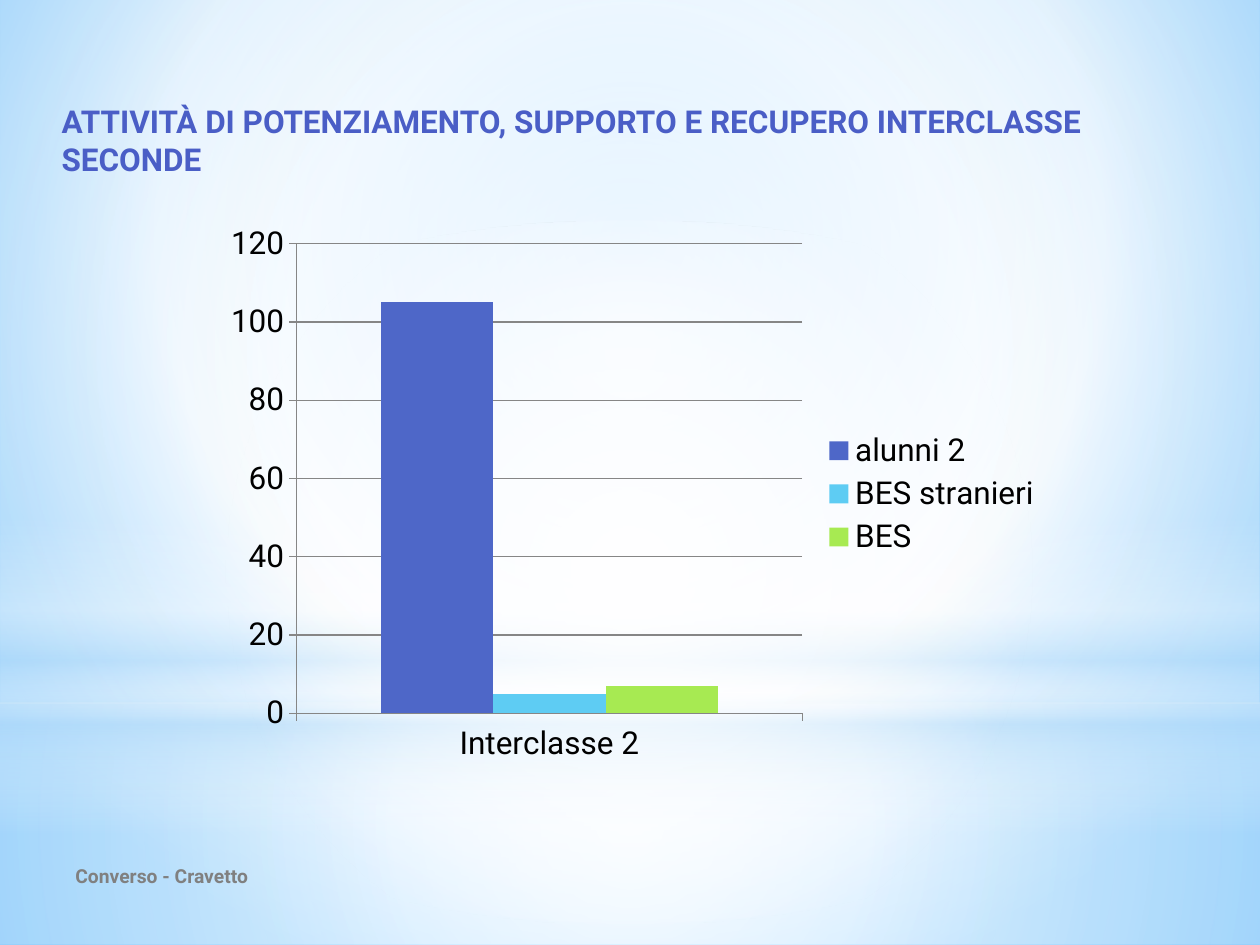
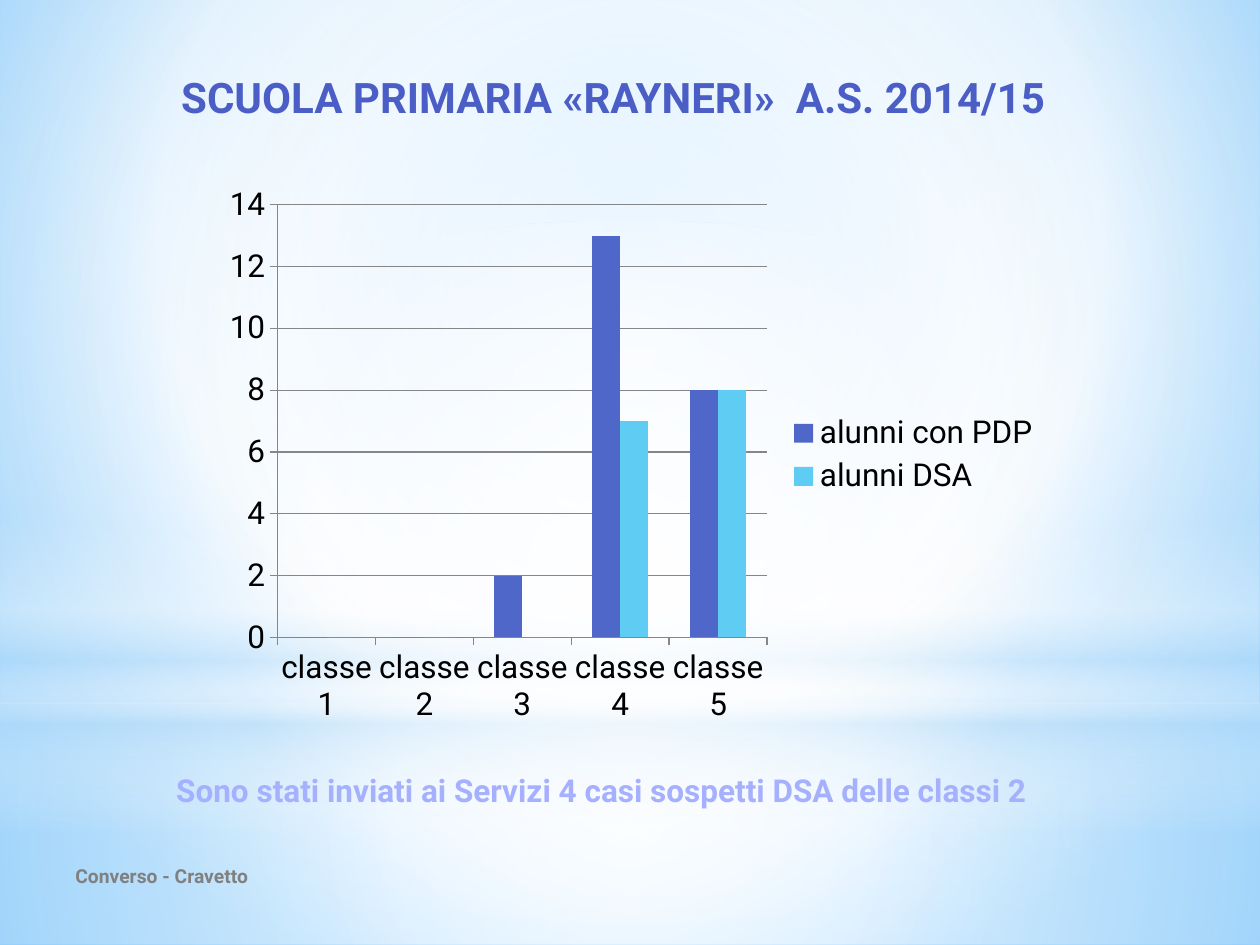
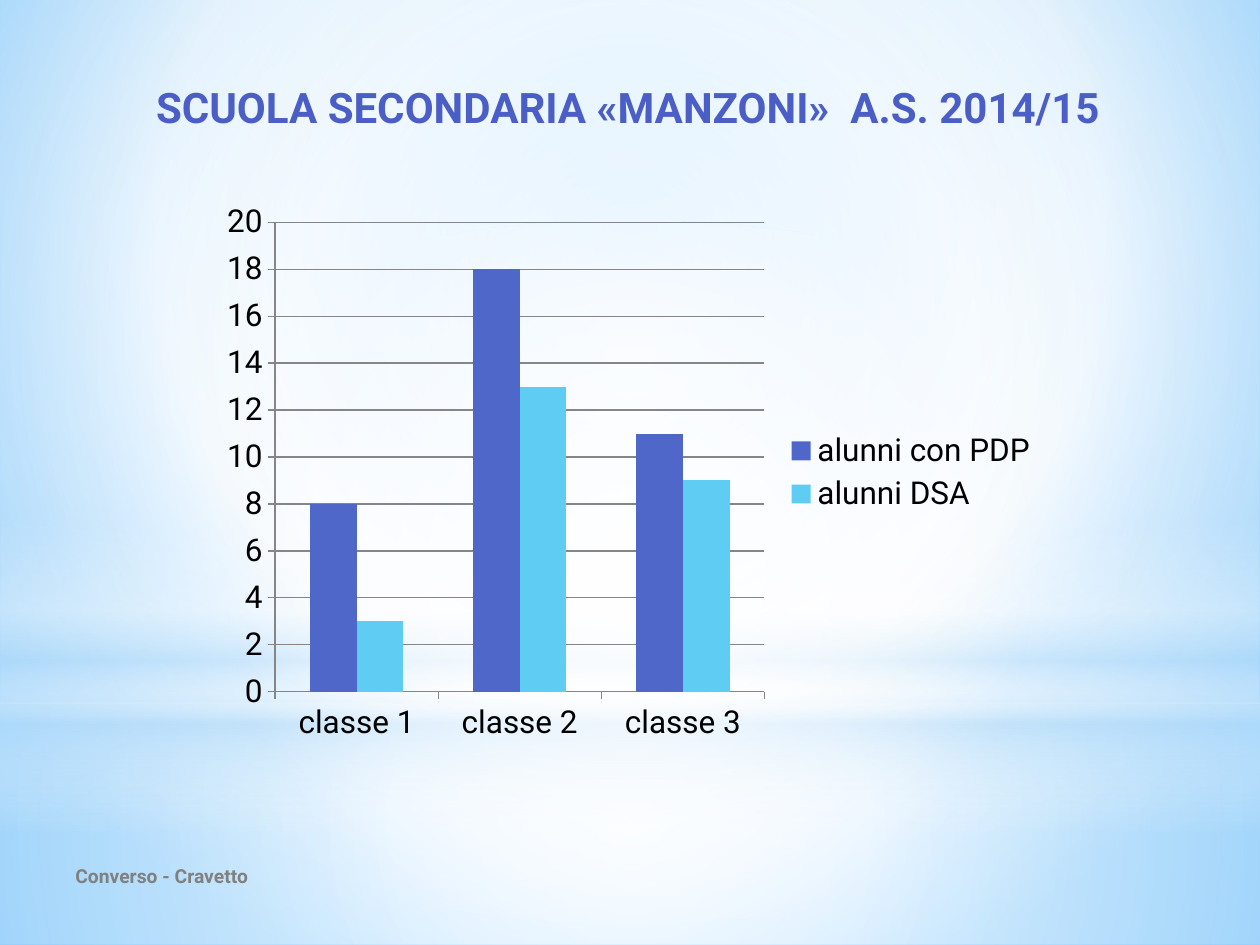
from lxml import etree
from pptx import Presentation
from pptx.chart.data import CategoryChartData
from pptx.dml.color import RGBColor
from pptx.enum.chart import XL_CHART_TYPE as ChartType, XL_LEGEND_POSITION as LegendPosition
from pptx.enum.chart import XL_TICK_MARK as TickMark
from pptx.enum.shapes import MSO_SHAPE as Preset
from pptx.enum.text import MSO_ANCHOR as Anchor, MSO_AUTO_SIZE as AutoSize
from pptx.oxml.ns import qn
from pptx.util import Inches, Pt

FONT = "Roboto"
COLORS = {
    "white": "FFFFFF", "haze": "B4DCFA", "sky": "9ED5FF", "deep_sky": "5BB9FF",
    "text": "000000", "footer": "808080", "axis": "868686", "outline": "445EC3",
    "blue": "4E67C8", "cyan": "5ECCF3", "green": "A7EA52",
    "title_1": "717FD2", "title_2": "4A5EC6", "title_3": "324CB5",
    "title_4": "31479D", "title_5": "30469A",
    "note_edge": "BCC4FF", "note_light": "A5B0FF", "note_dark": "001C8A",
}
SERIES_COLORS = ["blue", "cyan", "green"]
CENTER = (50, 50, 50, 50)

# Gradient stops: position %, colour, optional opacity %
BACKGROUND_STOPS = [(0, "sky"), (60, "white"), (100, "deep_sky")]
TITLE_STOPS = [(0, "title_1"), (49, "title_2"), (50, "title_3"), (92, "title_4"), (100, "title_5")]
NOTE_STOPS = [(0, "note_edge"), (9, "note_light"), (50, "note_dark"),
              (79, "note_light"), (100, "note_edge")]

# Master layers from back to front: preset, box, stops, focus (None = vertical)
LAYERS = [
    (Preset.RECTANGLE, (0, 5.58, 10, 1.92),
     [(0, "white", 91), (37, "white", 76), (100, "haze", 79)], CENTER),
    (Preset.RECTANGLE, (0, 0, 10, 5.58),
     [(0, "white", 89), (48, "white", 62), (100, "haze", 79)], CENTER),
    (Preset.RECTANGLE, (0, 4.12, 10, 2.5),
     [(0, "white", 0), (29, "white", 30), (45, "haze", 40),
      (55, "white", 26), (65, "haze", 60), (100, "white", 0)], None),
    (Preset.OVAL, (0, 1.75, 10, 5.58), [(0, "white"), (56, "white", 0)], CENTER),
]

PDP_NAMES = ("alunni con PDP", "alunni DSA")
SLIDES = [
    {"title": "ATTIVITÀ DI POTENZIAMENTO, SUPPORTO E RECUPERO INTERCLASSE SECONDE",
     "title_box": (0.39, 0.76, 9.29, 0.4), "title_size": 18,
     "chart_box": (1.7, 1.7, 6.67, 4.44),
     "categories": ["Interclasse 2"],
     "series": {"alunni 2": [105], "BES stranieri": [5], "BES": [7]}},
    {"title": "SCUOLA PRIMARIA «RAYNERI»  A.S. 2014/15",
     "title_box": (1.34, 0.52, 7.17, 0.5), "title_size": 24,
     "chart_box": (1.69, 1.39, 6.67, 4.44),
     "categories": [f"classe {number}" for number in range(1, 6)],
     "series": dict(zip(PDP_NAMES, ([0, 0, 2, 13, 8], [0, 0, 0, 7, 8]))),
     "note": "Sono stati inviati ai Servizi 4 casi sospetti DSA delle classi 2",
     "note_box": (1.3, 6.07, 7.32, 0.4)},
    {"title": "SCUOLA SECONDARIA «MANZONI»  A.S. 2014/15",
     "title_box": (1.14, 0.6, 7.72, 0.5), "title_size": 24,
     "chart_box": (1.67, 1.53, 6.67, 4.44),
     "categories": [f"classe {number}" for number in range(1, 4)],
     "series": dict(zip(PDP_NAMES, ([8, 18, 11], [3, 13, 9])))},
]


def rgb(name):
    return RGBColor.from_string(COLORS[name])


def inches(box):
    return [Inches(length) for length in box]


def apply_gradient(fill, element, stops, focus=None):
    """Fill with a circular gradient around focus, or a vertical one."""
    fill.solid()
    gradient = etree.Element(qn("a:gradFill"), rotWithShape="1")
    stop_list = etree.SubElement(gradient, qn("a:gsLst"))
    for position, name, *opacity in stops:
        stop = etree.SubElement(stop_list, qn("a:gs"), pos=str(position * 1000))
        color = etree.SubElement(stop, qn("a:srgbClr"), val=COLORS[name])
        if opacity:
            etree.SubElement(color, qn("a:alpha"), val=str(opacity[0] * 1000))
    if focus:
        circle = etree.SubElement(gradient, qn("a:path"), path="circle")
        edges = {side: str(value * 1000) for side, value in zip("ltrb", focus)}
        etree.SubElement(circle, qn("a:fillToRect"), **edges)
    else:
        etree.SubElement(gradient, qn("a:lin"), ang="5400000", scaled="0")
    solid = element.find(".//" + qn("a:solidFill"))
    solid.getparent().replace(solid, gradient)


def build_master(presentation, slide):
    """Give the master its sky; the layers are drawn on slide and moved over."""
    master = presentation.slide_master
    apply_gradient(master.background.fill, master.element.find(".//" + qn("p:bg")),
                   BACKGROUND_STOPS, (20, 10, 20, 60))
    tree = master.element.find(".//" + qn("p:spTree"))
    for index, (preset, box, stops, focus) in enumerate(LAYERS):
        shape = slide.shapes.add_shape(preset, *inches(box))
        shape.shadow.inherit = False
        apply_gradient(shape.fill, shape.element, stops, focus)
        shape.line.fill.background()
        tree.insert(2 + index, shape.element)


def add_text(slide, box, text, size):
    """Add a bold line of text and return its shape and run."""
    shape = slide.shapes.add_textbox(*inches(box))
    frame = shape.text_frame
    frame.word_wrap = True
    frame.text = text
    run = frame.paragraphs[0].runs[0]
    run.font.name = FONT
    run.font.size = Pt(size)
    run.font.bold = True
    return shape, run


def add_gradient_text(slide, box, text, size, stops):
    shape, run = add_text(slide, box, text, size)
    shape.text_frame.auto_size = AutoSize.SHAPE_TO_FIT_TEXT
    apply_gradient(run.font.fill, shape.element, stops)
    return run


def add_note(slide, box, text):
    run = add_gradient_text(slide, box, text, 18, NOTE_STOPS)
    properties = run.font.fill and run.text and run._r.get_or_add_rPr()
    line = etree.Element(qn("a:ln"), w=str(Pt(0.83)))
    solid = etree.SubElement(line, qn("a:solidFill"))
    etree.SubElement(solid, qn("a:srgbClr"), val=COLORS["outline"])
    properties.insert(0, line)


def add_footer(slide):
    shape, run = add_text(slide, (0.5, 6.75, 3.67, 0.4), "Converso - Cravetto", 11)
    shape.text_frame.vertical_anchor = Anchor.MIDDLE
    run.font.color.rgb = rgb("footer")


def style_line(line):
    line.color.rgb = rgb("axis")
    line.width = Pt(0.75)


def add_column_chart(slide, box, categories, series):
    data = CategoryChartData()
    data.categories = categories
    for name, values in series.items():
        data.add_series(name, values)
    chart = slide.shapes.add_chart(ChartType.COLUMN_CLUSTERED, *inches(box), data).chart
    chart.has_title = False
    chart.font.name = FONT
    chart.font.size = Pt(18)
    chart.font.color.rgb = rgb("text")

    # Legend and axes
    chart.has_legend = True
    chart.legend.position = LegendPosition.RIGHT
    chart.legend.include_in_layout = False
    for axis in (chart.category_axis, chart.value_axis):
        axis.major_tick_mark = TickMark.OUTSIDE
        axis.minor_tick_mark = TickMark.NONE
        style_line(axis.format.line)
    chart.value_axis.has_major_gridlines = True
    style_line(chart.value_axis.major_gridlines.format.line)

    # Columns
    plot = chart.plots[0]
    plot.gap_width = 150
    plot.vary_by_categories = False
    for column, color in zip(plot.series, SERIES_COLORS):
        column.format.fill.solid()
        column.format.fill.fore_color.rgb = rgb(color)


def build_slide(slide, content):
    add_footer(slide)
    add_column_chart(slide, content["chart_box"], content["categories"], content["series"])
    if "note" in content:
        add_note(slide, content["note_box"], content["note"])
    add_gradient_text(slide, content["title_box"], content["title"],
                      content["title_size"], TITLE_STOPS)


def main():
    presentation = Presentation()
    presentation.slide_width, presentation.slide_height = Inches(10), Inches(7.5)
    blank = presentation.slide_layouts[6]
    slides = [presentation.slides.add_slide(blank) for _ in SLIDES]
    build_master(presentation, slides[0])
    for slide, content in zip(slides, SLIDES):
        build_slide(slide, content)
    presentation.save("out.pptx")


if __name__ == "__main__":
    main()
